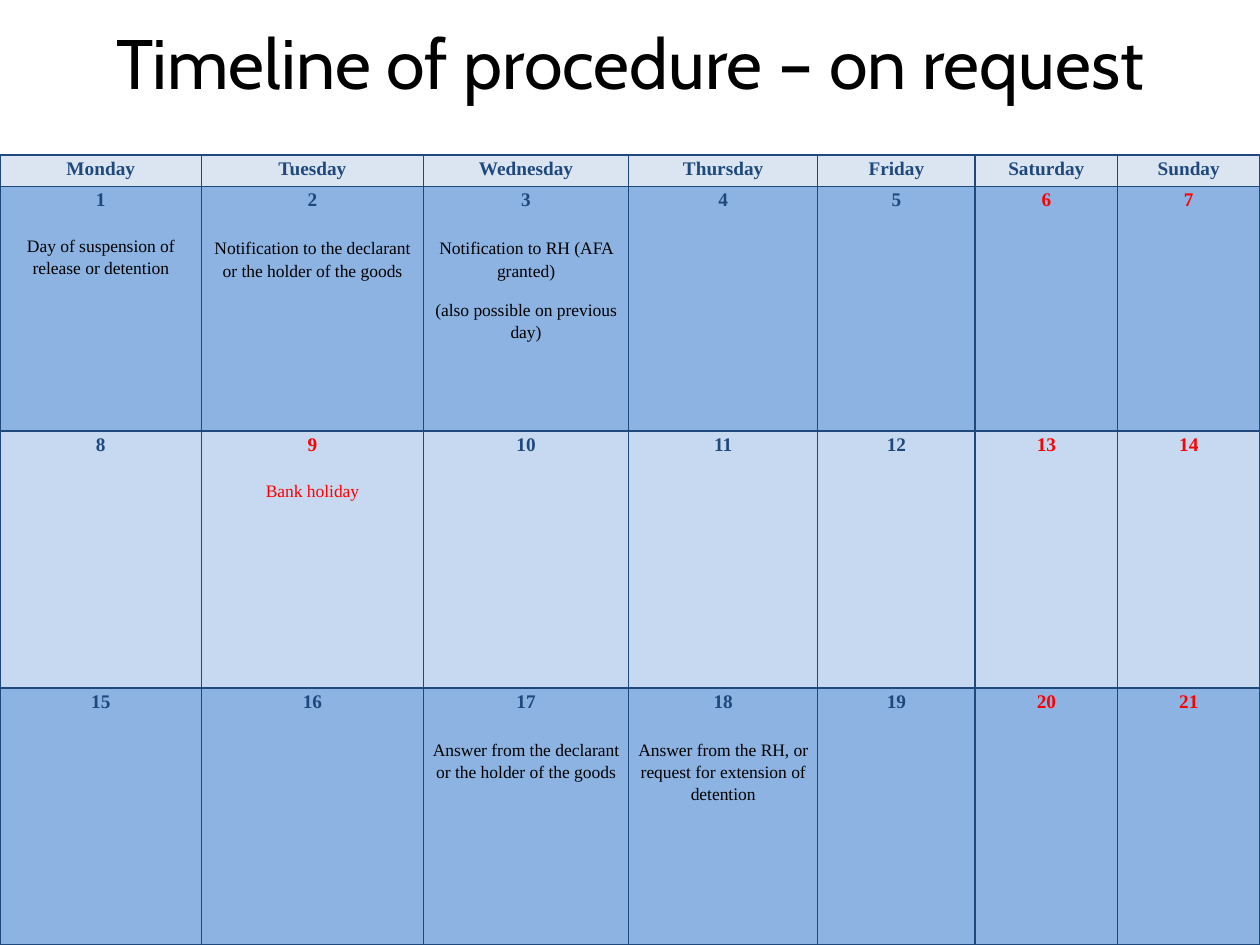
"""Build a three-week calendar slide for the procedure on request."""
from lxml import etree
from pptx import Presentation
from pptx.dml.color import RGBColor
from pptx.enum.text import MSO_ANCHOR, MSO_AUTO_SIZE, PP_ALIGN
from pptx.oxml.ns import qn
from pptx.util import Inches, Pt

CENTER = PP_ALIGN.CENTER
MIDDLE = MSO_ANCHOR.MIDDLE
NO_AUTOFIT = MSO_AUTO_SIZE.NONE

TITLE = "Timeline of procedure – on request"
WEEKDAYS = ["Monday", "Tuesday", "Wednesday", "Thursday", "Friday", "Saturday", "Sunday"]
NOTES = {
    1: ["Day of suspension of release or detention"],
    2: ["Notification to the declarant or the holder of the goods"],
    3: ["Notification to RH (AFA granted)", "(also possible on previous day)"],
    9: ["Bank holiday"],
    17: ["Answer from the declarant or the holder of the goods"],
    18: ["Answer from the RH, or request for extension of detention"],
}
HOLIDAYS = {9}
TIGHT_DAYS = {1, 9}
FIRST_WEEKEND_COLUMN = 5
COLUMN_WIDTHS = [1.6, 1.76, 1.63, 1.5, 1.25, 1.13, 1.13]
ROW_HEIGHTS = [0.25, 1.94, 2.04, 2.04]
ROW_FILLS = ["DBE5F1", "8DB3E2", "C6D9F1", "8DB3E2"]
NAVY, RED, BLACK = "1F497D", "FF0000", "000000"
CALENDAR_FONT = "Times New Roman"


def color(value):
    return RGBColor.from_string(value)


def add_span(para, text, font, size, shade, bold=False):
    para.alignment = CENTER
    span = para.add_run()
    span.text = text
    span.font.name = font
    span.font.size = Pt(size)
    span.font.bold = bold
    span.font.color.rgb = color(shade)


def set_borders(cell, shade, width):
    properties = cell._tc.get_or_add_tcPr()
    for position, side in enumerate(("a:lnL", "a:lnR", "a:lnT", "a:lnB")):
        line = etree.Element(qn(side), w=str(Pt(width)))
        fill = etree.SubElement(line, qn("a:solidFill"))
        etree.SubElement(fill, qn("a:srgbClr"), val=shade)
        properties.insert(position, line)


def fill_cell(cell, heading, shade, background, notes=(), note_shade=BLACK, gap=0):
    cell.margin_left = cell.margin_right = Inches(0.07)
    cell.margin_top = cell.margin_bottom = 0
    cell.fill.solid()
    cell.fill.fore_color.rgb = color(background)
    set_borders(cell, NAVY, 1)
    para = cell.text_frame.paragraphs[0]
    para.line_spacing = 1.15
    add_span(para, heading, CALENDAR_FONT, 11, shade, True)
    for index, note in enumerate(notes):
        para = cell.text_frame.add_paragraph()
        para.line_spacing = 1.15
        para.space_before = Pt(10 if index else gap)
        add_span(para, note, CALENDAR_FONT, 10, note_shade)


def add_title(slide):
    title = slide.shapes.title
    title.left, title.top = Inches(0.5), Inches(0.21)
    title.width, title.height = Inches(9), Inches(0.55)
    frame = title.text_frame
    frame.auto_size = NO_AUTOFIT
    frame.vertical_anchor = MIDDLE
    add_span(frame.paragraphs[0], TITLE, "Cabin", 40, BLACK)


def add_calendar(slide):
    height = sum(ROW_HEIGHTS)
    table = slide.shapes.add_table(
        len(ROW_HEIGHTS), len(WEEKDAYS),
        0, Inches(7.5 - height), Inches(10), Inches(height),
    ).table
    for column, width in zip(table.columns, COLUMN_WIDTHS):
        column.width = Inches(width)
    for row, row_height in zip(table.rows, ROW_HEIGHTS):
        row.height = Inches(row_height)
    for column, weekday in enumerate(WEEKDAYS):
        fill_cell(table.cell(0, column), weekday, NAVY, ROW_FILLS[0])
        for week in range(1, len(ROW_HEIGHTS)):
            day = (week - 1) * len(WEEKDAYS) + column + 1
            free = column >= FIRST_WEEKEND_COLUMN or day in HOLIDAYS
            fill_cell(
                table.cell(week, column), str(day), RED if free else NAVY,
                ROW_FILLS[week], NOTES.get(day, ()), RED if free else BLACK,
                13.2 if day in TIGHT_DAYS else 14.5,
            )


def main():
    deck = Presentation()
    deck.slide_width, deck.slide_height = Inches(10), Inches(7.5)
    slide = deck.slides.add_slide(deck.slide_layouts[5])
    add_title(slide)
    add_calendar(slide)
    deck.save("out.pptx")


if __name__ == "__main__":
    main()
